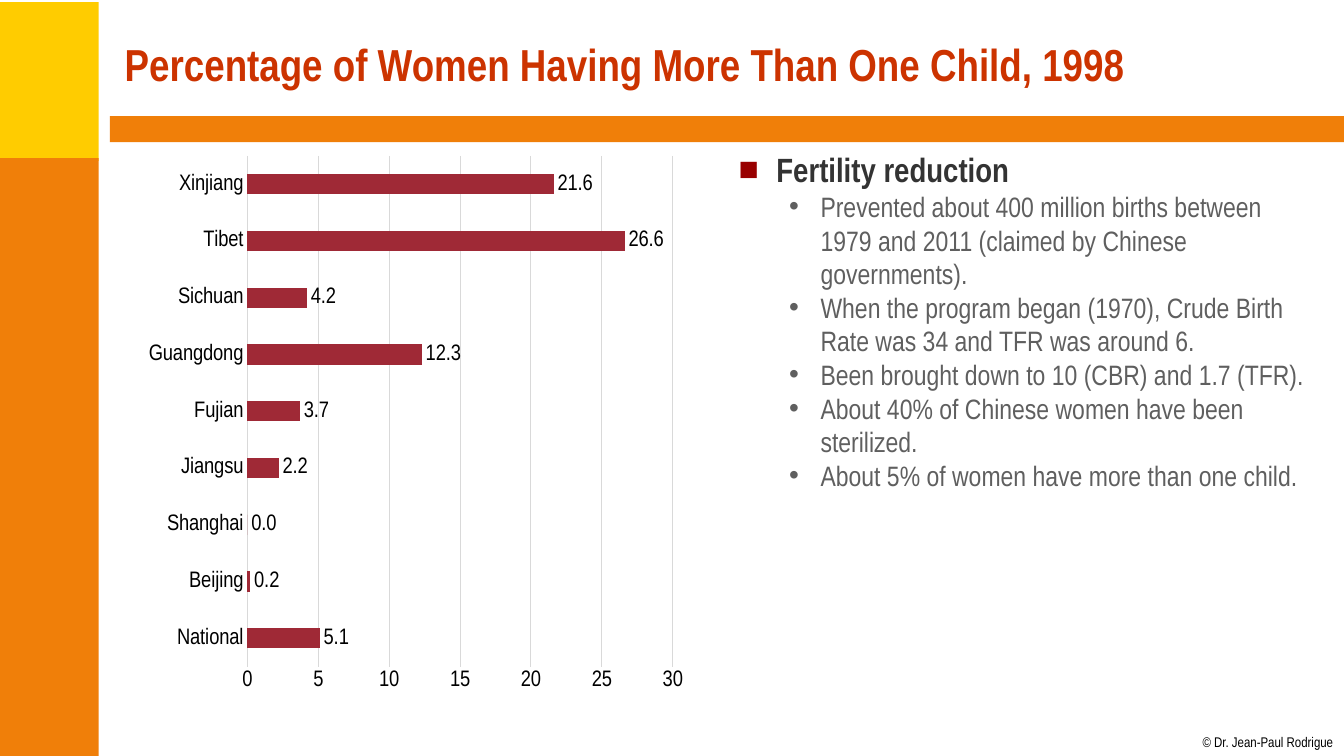
from dataclasses import dataclass

from lxml import etree
from pptx import Presentation
from pptx.chart.data import CategoryChartData
from pptx.dml.color import RGBColor
from pptx.enum import chart as charts, shapes, text
from pptx.oxml import ns
from pptx.util import Pt


@dataclass(frozen=True)
class Theme:
    """Colours, font and type sizes of the slide."""
    font: str = "Arial Narrow"
    yellow: str = "FFCC00"
    orange: str = "F07F09"
    title: str = "CC3300"
    heading: str = "333333"
    body: str = "5F5F5F"
    bullet: str = "990000"
    bar: str = "9F2936"
    grid: str = "D9D9D9"
    black: str = "000000"
    title_size: int = 32
    heading_size: int = 24
    body_size: int = 20
    chart_size: int = 16
    credit_size: int = 10


THEME = Theme()

BIRTHS = {
    "National": 5.1, "Beijing": 0.2, "Shanghai": 0, "Jiangsu": 2.2, "Fujian": 3.7,
    "Guangdong": 12.3, "Sichuan": 4.2, "Tibet": 26.6, "Xinjiang": 21.6,
}
FACTS = [
    "Prevented about 400 million births between 1979 and 2011 (claimed by Chinese governments).",
    "When the program began (1970), Crude Birth Rate was 34 and TFR was around 6.",
    "Been brought down to 10 (CBR) and 1.7 (TFR).",
    "About 40% of Chinese women have been sterilized.",
    "About 5% of women have more than one child.",
]


def rgb(colour):
    """Turn a hex colour into an RGBColor."""
    return RGBColor.from_string(colour)


def format_font(font, size, colour, bold=False):
    """Apply the theme font with a size, colour and weight."""
    font.name, font.size, font.bold = THEME.font, Pt(size), bold
    font.color.rgb = rgb(colour)


def add_element(parent, tag, **attributes):
    """Append an XML child with the given attributes."""
    element = etree.SubElement(parent, ns.qn(tag))
    for name, value in attributes.items():
        element.set(name, str(value))
    return element


def write(paragraph, words, *, size, colour, bold=False, bullet=None,
          bullet_colour=None, margin=0, hanging=0, level=0):
    """Fill a paragraph with formatted text and an optional hanging bullet."""
    paragraph.level = level
    if bullet:
        properties = paragraph._p.get_or_add_pPr()
        properties.set("marL", str(Pt(margin)))
        properties.set("indent", str(-Pt(hanging)))
        if bullet_colour:
            add_element(add_element(properties, "a:buClr"), "a:srgbClr", val=bullet_colour)
        add_element(properties, "a:buFont", typeface="Arial")
        add_element(properties, "a:buChar", char=bullet)
    run = paragraph.add_run()
    run.text = words
    format_font(run.font, size, colour, bold)


def add_text_frame(slide, box, wrap=True):
    """Add a text box and return its frame."""
    frame = slide.shapes.add_textbox(*map(Pt, box)).text_frame
    frame.word_wrap = wrap
    return frame


def add_band(slide, box, colour):
    """Add a plain coloured rectangle."""
    shape = slide.shapes.add_shape(shapes.MSO_SHAPE.RECTANGLE, *map(Pt, box))
    shape.shadow.inherit = False
    shape.fill.solid()
    shape.fill.fore_color.rgb = rgb(colour)
    shape.line.fill.background()


def add_frame(slide, box):
    """Draw the side and header bands and the credit."""
    left, top, width, height = box
    add_band(slide, (left - 1.5, top + 1.5, 72, 113.5), THEME.yellow)
    add_band(slide, (left - 1.5, top + 113, 72, height - 113), THEME.orange)
    add_band(slide, (left + 78.5, top + 83, width - 78.5, 18.5), THEME.orange)
    frame = add_text_frame(slide, (left + width - 101, top + height - 16, 94, 12), wrap=False)
    frame.margin_left = frame.margin_right = frame.margin_top = frame.margin_bottom = 0
    write(frame.paragraphs[0], "© Dr. Jean-Paul Rodrigue",
          size=THEME.credit_size, colour=THEME.black)


def add_title(slide, box, words):
    """Write the slide title, centred vertically in its box."""
    frame = add_text_frame(slide, box)
    frame.vertical_anchor = text.MSO_ANCHOR.MIDDLE
    write(frame.paragraphs[0], words, size=THEME.title_size, colour=THEME.title, bold=True)


def set_plot_area(chart, **fractions):
    """Fix the inner plot area as fractions of the chart."""
    plot_area = chart._chartSpace.chart.plotArea
    for old in plot_area.findall(ns.qn("c:layout")):
        plot_area.remove(old)
    layout = etree.Element(ns.qn("c:layout"))
    plot_area.insert(0, layout)
    manual = add_element(layout, "c:manualLayout")
    add_element(manual, "c:layoutTarget", val="inner")
    for mode in ("xMode", "yMode"):
        add_element(manual, f"c:{mode}", val="edge")
    for name, value in fractions.items():
        add_element(manual, f"c:{name}", val=value)


def add_births_chart(slide, box):
    """Add the bar chart of births by region."""
    data = CategoryChartData(number_format="#,##0.0")
    data.categories = list(BIRTHS)
    data.add_series("Series 1", list(BIRTHS.values()))
    chart = slide.shapes.add_chart(
        charts.XL_CHART_TYPE.BAR_CLUSTERED, *map(Pt, box), data).chart
    chart.has_legend = chart.has_title = False
    format_font(chart.font, THEME.chart_size, THEME.black)
    set_plot_area(chart, x=0.23, y=0.02, w=0.715, h=0.875)

    plot = chart.plots[0]
    plot.gap_width = 182
    plot.vary_by_categories = False
    fill = plot.series[0].format.fill
    fill.solid()
    fill.fore_color.rgb = rgb(THEME.bar)
    plot.has_data_labels = True
    labels = plot.data_labels
    labels.show_value = True
    labels.number_format, labels.number_format_is_linked = "#,##0.0", False
    labels.position = charts.XL_LABEL_POSITION.OUTSIDE_END
    format_font(labels.font, THEME.chart_size, THEME.black)

    category_axis, value_axis = chart.category_axis, chart.value_axis
    for axis in (category_axis, value_axis):
        axis.major_tick_mark = axis.minor_tick_mark = charts.XL_TICK_MARK.NONE
        format_font(axis.tick_labels.font, THEME.chart_size, THEME.black)
    value_axis.minimum_scale, value_axis.maximum_scale, value_axis.major_unit = 0, 30, 5
    value_axis.tick_labels.number_format = "0"
    value_axis.tick_labels.number_format_is_linked = False
    value_axis.format.line.fill.background()
    value_axis.has_major_gridlines = True
    category_axis.has_major_gridlines = False
    for line in (category_axis.format.line, value_axis.major_gridlines.format.line):
        line.color.rgb = rgb(THEME.grid)
        line.width = Pt(0.75)


def add_facts(slide, box):
    """Write the heading and its bulleted facts."""
    frame = add_text_frame(slide, box)
    write(frame.paragraphs[0], "Fertility reduction", size=THEME.heading_size,
          colour=THEME.heading, bold=True, bullet="■", bullet_colour=THEME.bullet,
          margin=27, hanging=27)
    for fact in FACTS:
        write(frame.add_paragraph(), fact, size=THEME.body_size, colour=THEME.body,
              bullet="•", margin=58.5, hanging=22.5, level=1)


def main():
    """Build and save the slide."""
    presentation = Presentation()
    presentation.slide_width, presentation.slide_height = Pt(960), Pt(540)
    slide = presentation.slides.add_slide(presentation.slide_layouts[6])
    add_frame(slide, (0, 0, 960, 540))
    add_title(slide, (82, 8, 862, 75), "Percentage of Women Having More Than One Child, 1998")
    add_births_chart(slide, (79, 103, 425, 417))
    add_facts(slide, (520.5, 103, 425, 417))
    presentation.save("out.pptx")


if __name__ == "__main__":
    main()
